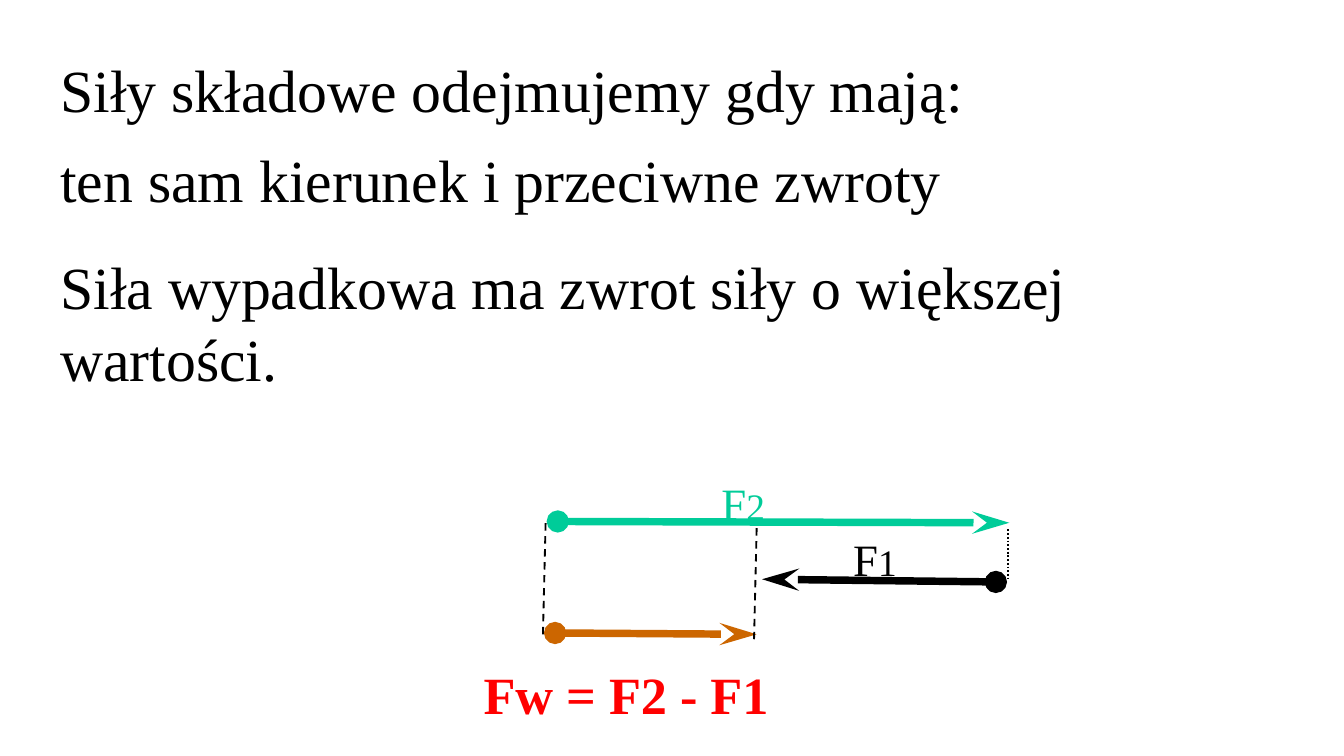
from dataclasses import dataclass

from lxml.etree import SubElement
from pptx import Presentation
from pptx.dml.color import RGBColor
from pptx.enum.dml import MSO_LINE_DASH_STYLE as DASH
from pptx.enum.shapes import MSO_CONNECTOR
from pptx.enum.text import MSO_AUTO_SIZE
from pptx.oxml.ns import qn
from pptx.util import Inches, Pt

FONT = "Times New Roman"
BLACK = RGBColor(0x00, 0x00, 0x00)
GREEN = RGBColor(0x00, 0xCC, 0x99)
ORANGE = RGBColor(0xCC, 0x66, 0x00)
RED = RGBColor(0xFF, 0x00, 0x00)

Point = tuple[float, float]
Box = tuple[float, float, float, float]
Run = tuple[str, int]  # text, size in points


@dataclass
class Force:
    tail: Point
    tip: Point
    color: RGBColor


@dataclass
class Guide:
    start: Point
    end: Point
    dash: DASH


@dataclass
class Label:
    box: Box
    paragraphs: list[list[Run]]
    color: RGBColor = BLACK
    bold: bool = False
    wrap: bool = True
    spacing: float | None = None


FORCES = [
    Force((4.15, 3.88), (7.51, 3.89), GREEN),
    Force((7.41, 4.33), (5.67, 4.31), BLACK),
    Force((4.13, 4.71), (5.63, 4.72), ORANGE),
]

GUIDES = [
    Guide((4.04, 4.72), (4.06, 3.88), DASH.DASH),
    Guide((5.63, 3.93), (5.61, 4.78), DASH.DASH),
    Guide((7.5, 3.94), (7.5, 4.31), DASH.ROUND_DOT),
]

LABELS = [
    Label((0.35, 0.21, 8.92, 1.45),
          [[("Siły składowe odejmujemy gdy mają:", 32)],
           [("ten sam kierunek i przeciwne zwroty", 32)]], spacing=1.25),
    Label((0.35, 1.81, 9.15, 1.18),
          [[("Siła wypadkowa ma zwrot siły o większej wartości.", 32)]]),
    Label((5.27, 3.49, 0.53, 0.51), [[("F", 24), ("2", 20)]], GREEN, wrap=False),
    Label((6.25, 3.91, 0.53, 0.51), [[("F", 24), ("1", 20)]], wrap=False),
    Label((3.5, 4.88, 2.68, 0.57), [[("Fw = F2 - F1", 28)]], RED, bold=True),
]


def add_line(slide, start: Point, end: Point, color: RGBColor, width: float):
    ends = [Inches(v) for v in (*start, *end)]
    line = slide.shapes.add_connector(MSO_CONNECTOR.STRAIGHT, *ends)
    line.line.color.rgb = color
    line.line.width = Pt(width)
    SubElement(line._element.spPr, qn("a:effectLst"))
    return line


def add_force(slide, force: Force) -> None:
    line = add_line(slide, force.tail, force.tip, force.color, 4)
    ln = line.line._get_or_add_ln()
    SubElement(ln, qn("a:headEnd"), type="oval")
    SubElement(ln, qn("a:tailEnd"), type="stealth", len="lg")


def add_guide(slide, guide: Guide) -> None:
    add_line(slide, guide.start, guide.end, BLACK, 1).line.dash_style = guide.dash


def add_label(slide, label: Label) -> None:
    tf = slide.shapes.add_textbox(*[Inches(v) for v in label.box]).text_frame
    tf.word_wrap = label.wrap
    tf.auto_size = MSO_AUTO_SIZE.SHAPE_TO_FIT_TEXT
    for i, runs in enumerate(label.paragraphs):
        p = tf.add_paragraph() if i else tf.paragraphs[0]
        p.line_spacing = label.spacing
        for text, size in runs:
            r = p.add_run()
            r.text = text
            r.font.name = FONT
            r.font.size = Pt(size)
            r.font.bold = label.bold
            r.font.color.rgb = label.color


def main() -> None:
    prs = Presentation()
    prs.slide_width = Inches(10)
    prs.slide_height = prs.slide_width * 9 // 16
    slide = prs.slides.add_slide(prs.slide_layouts[6])

    # Force arrows and the dashed lines that align them
    for force in FORCES:
        add_force(slide, force)
    for guide in GUIDES:
        add_guide(slide, guide)

    # Rules, force names and the formula
    for label in LABELS:
        add_label(slide, label)

    prs.save("out.pptx")


if __name__ == "__main__":
    main()
